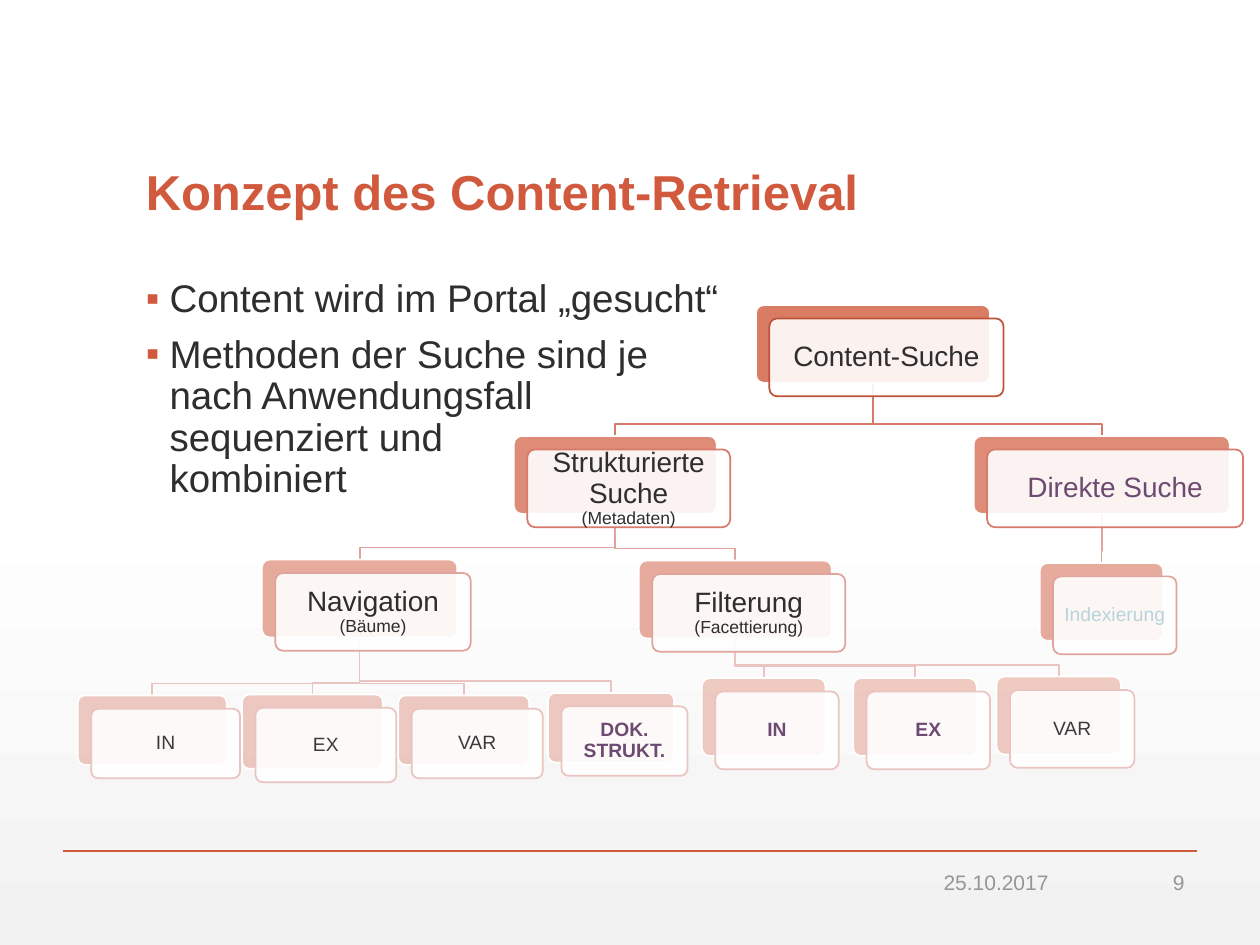
from collections import namedtuple
from copy import deepcopy

from lxml.etree import SubElement
from pptx import Presentation
from pptx.dml.color import RGBColor
from pptx.enum.shapes import MSO_CONNECTOR, MSO_SHAPE
from pptx.enum.text import MSO_ANCHOR, PP_ALIGN
from pptx.oxml.ns import qn
from pptx.util import Cm, Pt

COLORS = {
    "accent": "D15A3E", "white": "FFFFFF", "fade": "F2F2F2",
    "text": "2D2E2D", "leaf": "3A3A3A", "purple": "6D4A71",
    "pale_blue": "B7D4DB", "footer": "959795",
}
# Each tree level: outline colour, opacity of the back card in percent
LEVELS = [("BE5238", 80), ("D67A6B", 70), ("E0A49D", 50), ("E9C4C0", 30)]
CARD_OFFSET = 0.27
BRANCH_DROP = 0.24

Box = namedtuple("Box", "left top width height")
Node = namedtuple("Node", "label parent level box color size bold")


def node(label, parent, level, box, color="text", size=16, bold=False):
    return Node(label, parent, level, Box(*box), color, size, bold)


# Cards in cm, relative to the tree's box; parent is an index in this list
NODES = [
    node("Content-Suche", None, 0, (13.67, 0, 4.72, 1.57)),
    node("Strukturierte\nSuche\n(Metadaten)", 0, 1, (8.79, 2.64, 4.09, 1.57)),
    node("Navigation\n(Bäume)", 1, 2, (3.71, 5.13, 3.94, 1.57)),
    node("IN", 2, 3, (0, 7.87, 3, 1.4), "leaf", 11),
    node("EX", 2, 3, (3.31, 7.85, 2.84, 1.5), "leaf", 11),
    node("VAR", 2, 3, (6.46, 7.87, 2.64, 1.4), "leaf", 11),
    node("DOK.\nSTRUKT.", 2, 3, (9.48, 7.82, 2.54, 1.4), "purple", 11, True),
    node("Filterung\n(Facettierung)", 1, 2, (11.31, 5.15, 3.89, 1.57)),
    node("IN", 7, 3, (12.58, 7.52, 2.49, 1.57), "purple", 11, True),
    node("EX", 7, 3, (15.63, 7.52, 2.49, 1.57), "purple", 11, True),
    node("VAR", 7, 3, (18.52, 7.49, 2.51, 1.57), "leaf", 11),
    node("Direkte Suche", 0, 1, (18.06, 2.64, 5.16, 1.57), "purple"),
    node("Indexierung", 11, 2, (19.39, 5.2, 2.49, 1.57), "pale_blue", 11),
]


def rgb(value):
    return RGBColor.from_string(COLORS.get(value, value))


def write(paragraph, text, size, color, bold=False, small=None):
    """Fill a paragraph; runs in parentheses take the small size."""
    paragraph.text = text
    for run in paragraph.runs:
        in_parentheses = small and run.text.startswith("(")
        run.font.name = "Arial"
        run.font.size = Pt(small if in_parentheses else size)
        run.font.bold = bold
        run.font.color.rgb = rgb(color)
    # Line breaks take the format of the run before them
    for line_break in paragraph._p.findall(qn("a:br")):
        line_break.append(deepcopy(line_break.getprevious().find(qn("a:rPr"))))


def add_text_box(slide, box, anchor):
    text_frame = slide.shapes.add_textbox(*map(Cm, box)).text_frame
    text_frame.word_wrap = True
    text_frame.vertical_anchor = anchor
    return text_frame


def add_card(shapes, box, fill, opacity, line):
    card = shapes.add_shape(MSO_SHAPE.ROUNDED_RECTANGLE, *map(Cm, box))
    card.adjustments[0] = 0.1
    card.shadow.inherit = False
    card.fill.solid()
    card.fill.fore_color.rgb = rgb(fill)
    color = card.fill._xPr.find(qn("a:solidFill"))[0]
    SubElement(color, qn("a:alpha"), val=str(opacity * 1000))
    card.line.color.rgb = rgb(line)
    card.line.width = Pt(1)
    return card


def add_branch(shapes, parent, child, color):
    start_x = parent.left + parent.width / 2
    end_x = child.left + child.width / 2
    bend_y = child.top - BRANCH_DROP
    builder = shapes.build_freeform(Cm(start_x), Cm(parent.top + parent.height))
    corners = [(start_x, bend_y), (end_x, bend_y), (end_x, child.top)]
    builder.add_line_segments([(Cm(x), Cm(y)) for x, y in corners], close=False)
    branch = builder.convert_to_shape()
    branch.fill.background()
    branch.line.color.rgb = rgb(color)
    branch.line.width = Pt(1)
    branch.shadow.inherit = False


def add_node(shapes, item, box):
    line, opacity = LEVELS[item.level]
    add_card(shapes, box, "accent", opacity, "white")
    front = box._replace(left=box.left + CARD_OFFSET, top=box.top + CARD_OFFSET)
    text_frame = add_card(shapes, front, "white", 90, line).text_frame
    inset = Cm(0.18 if item.size == 16 else 0.13)
    text_frame.margin_left = text_frame.margin_right = inset
    text_frame.margin_top = text_frame.margin_bottom = inset
    text_frame.word_wrap = True
    text_frame.vertical_anchor = MSO_ANCHOR.MIDDLE
    paragraph = text_frame.paragraphs[0]
    write(paragraph, item.label, item.size, item.color, item.bold, small=10)
    paragraph.alignment = PP_ALIGN.CENTER
    paragraph.line_spacing = 0.9


def add_tree(slide, left, top):
    shapes = slide.shapes.add_group_shape().shapes
    boxes = [item.box._replace(left=left + item.box.left, top=top + item.box.top)
             for item in NODES]
    # Branches lie behind the cards
    for item, box in zip(NODES, boxes):
        if item.parent is not None:
            add_branch(shapes, boxes[item.parent], box, LEVELS[item.level][0])
    for item, box in zip(NODES, boxes):
        add_node(shapes, item, box)


def add_title(slide, box):
    paragraph = add_text_box(slide, box, MSO_ANCHOR.BOTTOM).paragraphs[0]
    write(paragraph, "Konzept des Content-Retrieval", 28, "accent", bold=True)
    paragraph.line_spacing = 0.9


def add_bullets(slide, box, items):
    text_frame = add_text_box(slide, box, MSO_ANCHOR.TOP)
    for index, text in enumerate(items):
        paragraph = text_frame.add_paragraph() if index else text_frame.paragraphs[0]
        write(paragraph, text, 22, "text")
        paragraph.line_spacing = 0.9
        paragraph.space_before = Pt(8)
        properties = paragraph._p.get_or_add_pPr()
        properties.set("marL", str(Cm(0.48)))
        properties.set("indent", str(-Cm(0.48)))
        bullet_color = SubElement(properties, qn("a:buClr"))
        SubElement(bullet_color, qn("a:srgbClr"), val=COLORS["accent"])
        SubElement(properties, qn("a:buFont"), typeface="Arial")
        SubElement(properties, qn("a:buChar"), char="▪")


def add_footer(slide, box):
    # Rule above the footer
    rule = slide.shapes.add_connector(
        MSO_CONNECTOR.STRAIGHT, Cm(box.left), Cm(box.top),
        Cm(box.left + box.width), Cm(box.top))
    rule.line.color.rgb = rgb("accent")
    rule.line.width = Pt(1)
    SubElement(rule._element.spPr, qn("a:effectLst"))
    # Date and page number
    for text, offset, width in (("25.10.2017", 16.51, 3.61), ("9", 20.95, 1.91)):
        text_box = Box(box.left + offset, box.top + 0.33, width, 0.61)
        paragraph = add_text_box(slide, text_box, MSO_ANCHOR.MIDDLE).paragraphs[0]
        write(paragraph, text, 12, "footer")
        paragraph.alignment = PP_ALIGN.RIGHT


def set_background(slide):
    fill = slide.background.fill
    fill.gradient()
    fill.gradient_angle = 270
    stops = ((0.53, "white"), (1, "fade"))
    for stop, (position, color) in zip(fill.gradient_stops, stops):
        stop.position = position
        stop.color.rgb = rgb(color)


def main():
    presentation = Presentation()
    presentation.slide_width, presentation.slide_height = Cm(25.4), Cm(19.05)
    slide = presentation.slides.add_slide(presentation.slide_layouts[6])
    set_background(slide)
    add_footer(slide, Box(1.27, 17.15, 22.86, 0.94))
    add_tree(slide, 1.57, 6.15)
    add_title(slide, Box(2.69, 1.4, 20.02, 3.18))
    add_bullets(slide, Box(2.69, 5.51, 20.02, 10.59), [
        "Content wird im Portal „gesucht“",
        "Methoden der Suche sind je\nnach Anwendungsfall\nsequenziert und\nkombiniert",
    ])
    presentation.save("out.pptx")


if __name__ == "__main__":
    main()
